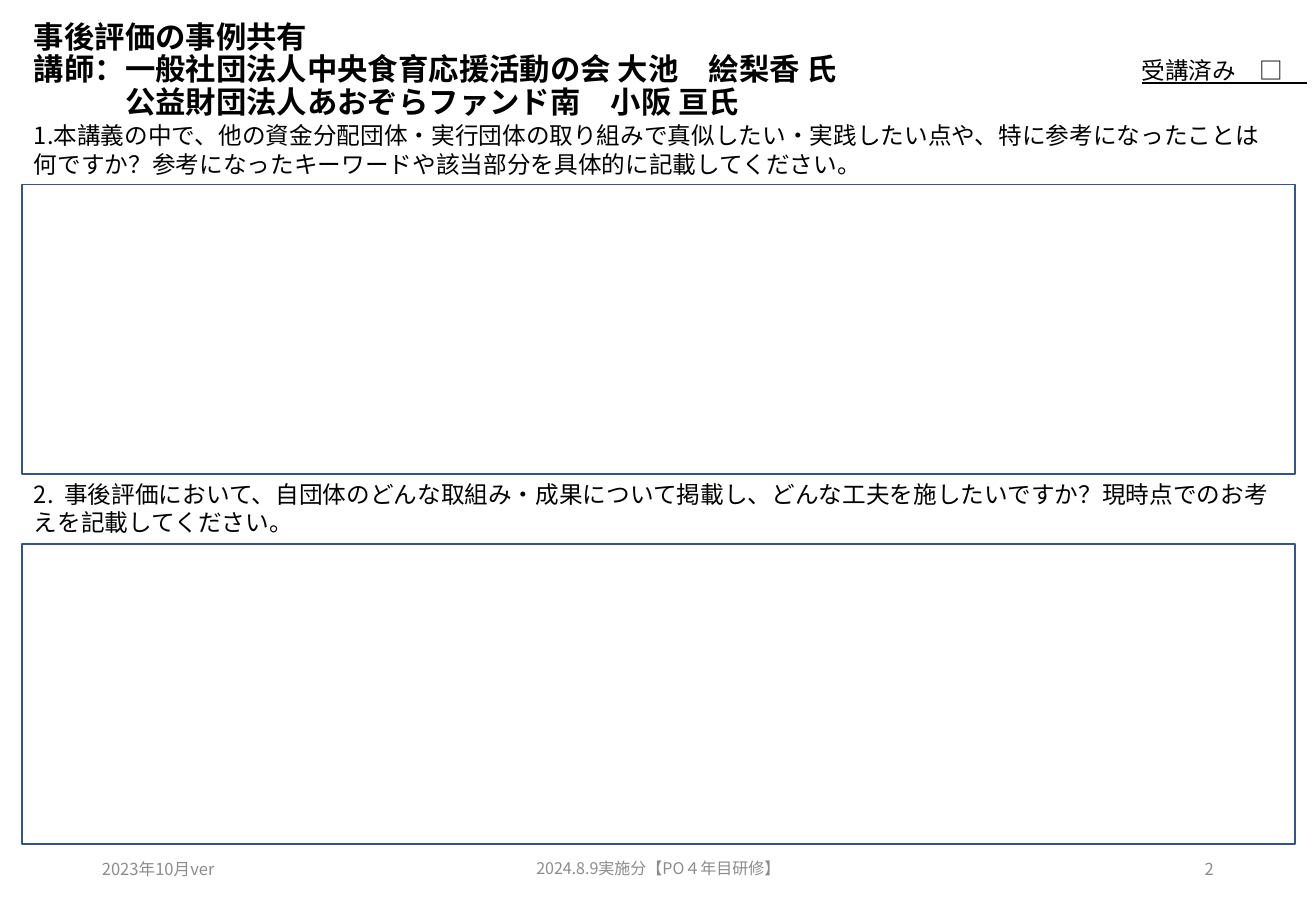
from lxml.etree import SubElement
from pptx import Presentation
from pptx.dml.color import RGBColor
from pptx.enum.shapes import MSO_SHAPE
from pptx.enum.text import MSO_ANCHOR, PP_ALIGN
from pptx.oxml.ns import qn
from pptx.util import Pt

FONT = "Noto Sans CJK JP"
COLORS = {"text": "000000", "footer": "8C8C8C", "border": "325491", "paper": "FFFFFF"}
TITLE_SIZE = 18
TITLE_LINES = [
    ("事後評価の事例共有", 0),
    ("講師：中央食育応援活動の会 大池　絵梨香 氏", 0),
    ("公益財団法人あおぞらファンド南　小阪 亘氏", 3),
]
TITLE_LINES[1] = ("講師：一般社団法人中央食育応援活動の会 大池　絵梨香 氏", 0)
ATTENDANCE = "受講済み　□　"
QUESTIONS = [
    ("1.本講義の中で、他の資金分配団体・実行団体の取り組みで真似したい・実践したい点や、"
     "特に参考になったことは何ですか？参考になったキーワードや該当部分を具体的に記載してください。",
     68.4, 754.6, 109.4, 171.4),
    ("2.  事後評価において、自団体のどんな取組み・成果について掲載し、"
     "どんな工夫を施したいですか？現時点でのお考えを記載してください。",
     280.8, 748.1, 322.6, 177.8),
]
FOOTERS = [
    ("2023年10月ver", 53.3, 175.7, 9.8, PP_ALIGN.LEFT),
    ("2024.8.9実施分【PO４年目研修】", 258.5, 263.5, 9.5, PP_ALIGN.CENTER),
    ("2", 550.8, 175.7, 9.8, PP_ALIGN.RIGHT),
]
LEFT, ANSWER_WIDTH = 13, 754.6
FOOTER_TOP, FOOTER_HEIGHT = 500.4, 28.8


def add_text(slide, lines, box, size, color="text", bold=False, underline=False,
             align=PP_ALIGN.LEFT, anchor=MSO_ANCHOR.TOP, spacing=None):
    shape = slide.shapes.add_textbox(*map(Pt, box))
    frame = shape.text_frame
    frame.word_wrap = True
    frame.vertical_anchor = anchor
    frame.text = "\n".join(lines)
    for paragraph in frame.paragraphs:
        paragraph.alignment = align
        paragraph.line_spacing = spacing
        for run in paragraph.runs:
            font = run.font
            font.name = FONT
            font.size = Pt(size)
            font.bold = bold
            font.underline = underline
            font.color.rgb = RGBColor.from_string(COLORS[color])
            SubElement(font._element, qn("a:ea"), typeface=FONT)
    return shape


def add_answer_box(slide, top, height):
    shape = slide.shapes.add_shape(
        MSO_SHAPE.RECTANGLE, Pt(LEFT), Pt(top), Pt(ANSWER_WIDTH), Pt(height))
    shape.shadow.inherit = False
    shape.fill.solid()
    shape.fill.fore_color.rgb = RGBColor.from_string(COLORS["paper"])
    shape.line.color.rgb = RGBColor.from_string(COLORS["border"])
    shape.line.width = Pt(1)


def main():
    presentation = Presentation()
    presentation.slide_width, presentation.slide_height = Pt(780), Pt(540)
    slide = presentation.slides.add_slide(presentation.slide_layouts[6])

    title = add_text(slide, [text for text, _ in TITLE_LINES], (LEFT, 6.5, 714.2, 71.3),
                     TITLE_SIZE, bold=True, anchor=MSO_ANCHOR.MIDDLE, spacing=0.9)
    for paragraph, (_, indent) in zip(title.text_frame.paragraphs, TITLE_LINES):
        properties = paragraph._p.get_or_add_pPr()
        properties.set("marL", str(Pt(indent * TITLE_SIZE)))
        properties.set("indent", "0")

    add_text(slide, [ATTENDANCE], (669.6, 29.5, 144.7, 24.5), 14, underline=True)

    for question, top, width, answer_top, answer_height in QUESTIONS:
        add_answer_box(slide, answer_top, answer_height)
        add_text(slide, [question], (LEFT, top, width, answer_top - top), 14)

    for text, left, width, size, align in FOOTERS:
        add_text(slide, [text], (left, FOOTER_TOP, width, FOOTER_HEIGHT), size,
                 color="footer", align=align, anchor=MSO_ANCHOR.MIDDLE)

    presentation.save("out.pptx")


if __name__ == "__main__":
    main()
